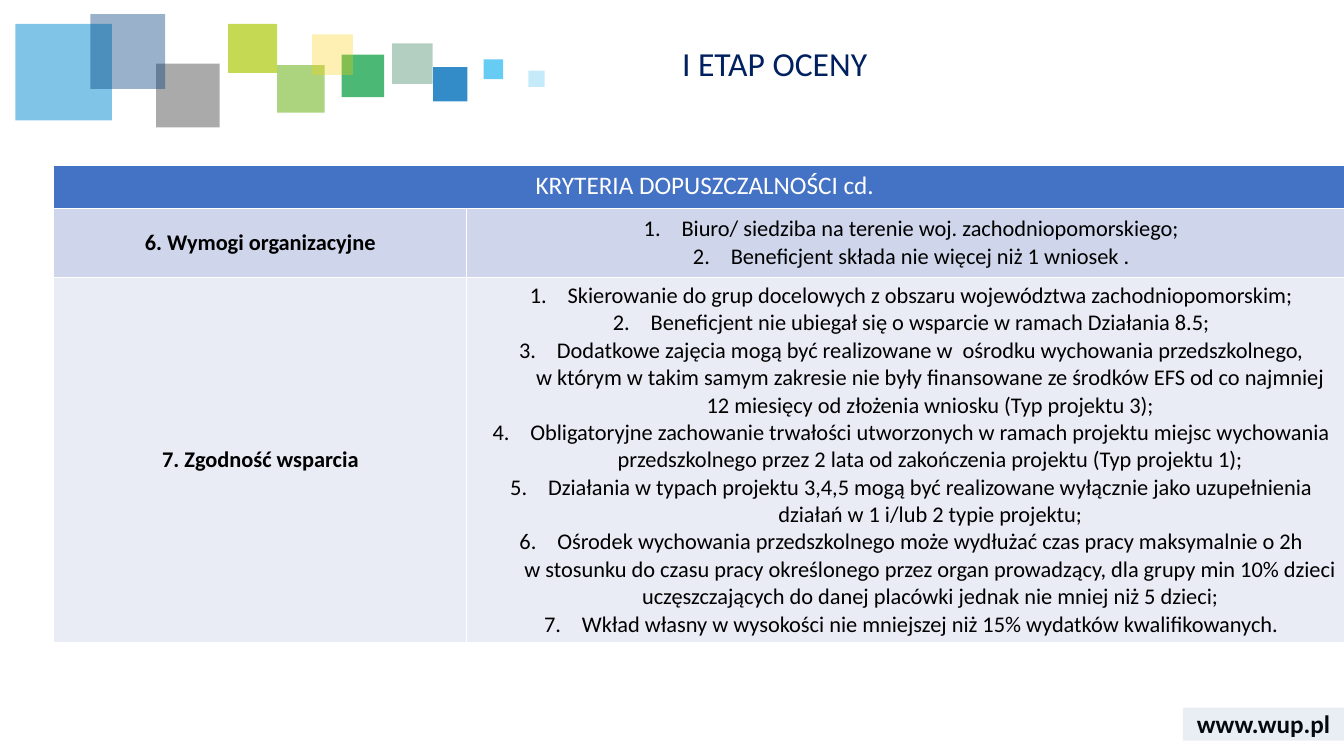
"""Build the slide with the admissibility criteria of the first assessment stage."""
from dataclasses import dataclass

import lxml.etree
import pptx
import pptx.dml.color
import pptx.enum.shapes
import pptx.enum.text
import pptx.oxml
import pptx.oxml.ns
import pptx.util

Pt = pptx.util.Pt
Align = pptx.enum.text.PP_ALIGN
Anchor = pptx.enum.text.MSO_ANCHOR
qn = pptx.oxml.ns.qn

FONT = "Calibri"
COLOURS = {
    "white": "FFFFFF", "black": "000000", "title": "002060",
    "header": "4472C4", "band_dark": "CFD5EA", "band_light": "E9EBF5",
    "footer": "2F5597", "pine": "006138", "blue": "006EB9",
    "green": "009A3C", "azure": "028BD3", "leaf": "75B82A",
    "grey": "575757", "navy": "003D7C", "sky": "40C0F1",
    "lime": "AFCA0B", "yellow": "FED000",
}


@dataclass(frozen=True)
class Tile:
    """A translucent rectangle, in points and percent opacity."""

    left: float
    top: float
    width: float
    height: float
    colour: str
    opacity: int


@dataclass(frozen=True)
class Criterion:
    """A table row: its name, numbered conditions, fill and height."""

    name: str
    conditions: tuple[str, ...]
    fill: str
    height: float


TILES = (
    Tile(280, 31, 29, 29, "pine", 30),
    Tile(309.5, 48, 24.5, 24.5, "blue", 80),
    Tile(244, 39, 30.5, 30.5, "green", 70),
    Tile(11, 17, 69, 69, "azure", 50),
    Tile(198, 46.5, 34, 34, "leaf", 60),
    Tile(111.5, 45.5, 45.5, 45.5, "grey", 50),
    Tile(64.5, 10, 53.5, 53.5, "navy", 40),
    Tile(345.5, 42.5, 14, 14, "sky", 80),
    Tile(163, 17, 35, 35, "lime", 70),
    Tile(223, 24.5, 29, 29, "yellow", 30),
    Tile(377.5, 50.5, 11.5, 11.5, "sky", 30),
    Tile(845, 505.5, 115, 23.5, "footer", 10),
)

HEADER_HEIGHT = 31
COLUMN_WIDTHS = (295, 635)
CRITERIA = (
    Criterion("6. Wymogi organizacyjne", (
        "Biuro/ siedziba na terenie woj. zachodniopomorskiego;",
        "Beneficjent składa nie więcej niż 1 wniosek .",
    ), "band_dark", 49),
    Criterion("7. Zgodność wsparcia", (
        "Skierowanie do grup docelowych z obszaru województwa zachodniopomorskim;",
        "Beneficjent nie ubiegał się o wsparcie w ramach Działania 8.5;",
        "Dodatkowe zajęcia mogą być realizowane w  ośrodku wychowania przedszkolnego,\n"
        "w którym w takim samym zakresie nie były finansowane ze środków EFS od co najmniej\n"
        "12 miesięcy od złożenia wniosku (Typ projektu 3);",
        "Obligatoryjne zachowanie trwałości utworzonych w ramach projektu miejsc wychowania "
        "przedszkolnego przez 2 lata od zakończenia projektu (Typ projektu 1);",
        "Działania w typach projektu 3,4,5 mogą być realizowane wyłącznie jako uzupełnienia "
        "działań w 1 i/lub 2 typie projektu;",
        "Ośrodek wychowania przedszkolnego może wydłużać czas pracy maksymalnie o 2h\n"
        "w stosunku do czasu pracy określonego przez organ prowadzący, dla grupy min 10% dzieci "
        "uczęszczających do danej placówki jednak nie mniej niż 5 dzieci;",
        "Wkład własny w wysokości nie mniejszej niż 15% wydatków kwalifikowanych.",
    ), "band_light", 261),
)


def rgb(name: str) -> pptx.dml.color.RGBColor:
    """Return the named colour."""
    return pptx.dml.color.RGBColor.from_string(COLOURS[name])


def add_text(para, text: str, size: float, colour: str, bold: bool = False) -> None:
    """Add formatted runs to a paragraph, one for each line of text."""
    for index, line in enumerate(text.split("\n")):
        if index:
            para.add_line_break()
        span = para.add_run()
        span.text = line
        span.font.name = FONT
        span.font.size = Pt(size)
        span.font.bold = bold
        span.font.color.rgb = rgb(colour)


def number_paragraph(para) -> None:
    """Give a paragraph automatic numbering with a hanging indent."""
    properties = para._p.get_or_add_pPr()
    properties.set("marL", str(Pt(27)))
    properties.set("indent", str(Pt(-27)))
    lxml.etree.SubElement(properties, qn("a:buFont"), typeface="+mj-lt")
    lxml.etree.SubElement(properties, qn("a:buAutoNum"), type="arabicPeriod")


def add_tile(page, tile: Tile) -> None:
    """Draw one translucent rectangle."""
    box = page.shapes.add_shape(
        pptx.enum.shapes.MSO_SHAPE.RECTANGLE,
        Pt(tile.left), Pt(tile.top), Pt(tile.width), Pt(tile.height))
    box.shadow.inherit = False
    box.line.fill.background()
    box.fill.solid()
    box.fill.fore_color.rgb = rgb(tile.colour)
    colour = box._element.spPr.find(qn("a:solidFill"))[0]
    lxml.etree.SubElement(colour, qn("a:alpha"), val=str(tile.opacity * 1000))


def style_cell(cell, fill: str) -> None:
    """Set white borders, a plain fill and middle anchoring on a cell."""
    properties = cell._tc.get_or_add_tcPr()
    for side in ("lnL", "lnR", "lnT", "lnB"):
        border = lxml.etree.SubElement(properties, qn(f"a:{side}"), w=str(Pt(1)))
        paint = lxml.etree.SubElement(border, qn("a:solidFill"))
        lxml.etree.SubElement(paint, qn("a:srgbClr"), val=COLOURS["white"])
    cell.fill.solid()
    cell.fill.fore_color.rgb = rgb(fill)
    cell.vertical_anchor = Anchor.MIDDLE


def fill_cell(cell, texts: tuple[str, ...], size: float, colour: str,
              bold: bool = False, numbered: bool = False) -> None:
    """Write centred paragraphs into a cell."""
    frame = cell.text_frame
    for index, text in enumerate(texts):
        para = frame.add_paragraph() if index else frame.paragraphs[0]
        if numbered:
            number_paragraph(para)
        para.alignment = Align.CENTER
        add_text(para, text, size, colour, bold)


def add_criteria(page) -> None:
    """Draw the table of criteria."""
    heights = (HEADER_HEIGHT, *(item.height for item in CRITERIA))
    table = page.shapes.add_table(
        len(heights), len(COLUMN_WIDTHS), Pt(38.5), Pt(118),
        Pt(sum(COLUMN_WIDTHS)), Pt(sum(heights))).table
    for column, width in zip(table.columns, COLUMN_WIDTHS):
        column.width = Pt(width)
    for row, height in zip(table.rows, heights):
        row.height = Pt(height)
    fills = ("header", *(item.fill for item in CRITERIA))
    for row, fill in zip(table.rows, fills):
        for cell in row.cells:
            style_cell(cell, fill)
    heading = table.cell(0, 0)
    heading.merge(table.cell(0, 1))
    heading.vertical_anchor = Anchor.TOP
    fill_cell(heading, ("KRYTERIA DOPUSZCZALNOŚCI cd.",), 18, "white")
    for index, item in enumerate(CRITERIA, start=1):
        fill_cell(table.cell(index, 0), (item.name,), 16, "black", bold=True)
        fill_cell(table.cell(index, 1), item.conditions, 16, "black", numbered=True)


def add_footer(page) -> None:
    """Write the web address in the bottom corner."""
    box = page.shapes.add_textbox(Pt(845), Pt(502), Pt(115), Pt(29))
    frame = box.text_frame
    frame.word_wrap = True
    frame.vertical_anchor = Anchor.MIDDLE
    frame.paragraphs[0].alignment = Align.CENTER
    add_text(frame.paragraphs[0], "www.wup.pl", 18, "black", bold=True)


def format_title(page) -> None:
    """Place and write the slide title."""
    title = page.shapes.title
    title.left, title.top, title.width, title.height = Pt(480), Pt(30), Pt(458), Pt(40)
    frame = title.text_frame
    frame.vertical_anchor = Anchor.TOP
    para = frame.paragraphs[0]
    para.alignment = Align.LEFT
    para.line_spacing = 0.9
    add_text(para, "I ETAP OCENY", 24, "title")


def main() -> None:
    """Build and save the deck."""
    deck = pptx.Presentation()
    deck.slide_width, deck.slide_height = Pt(960), Pt(540)
    page = deck.slides.add_slide(deck.slide_layouts[5])
    add_footer(page)
    for tile in TILES:
        add_tile(page, tile)
    add_criteria(page)
    format_title(page)
    deck.save("out.pptx")


if __name__ == "__main__":
    main()
